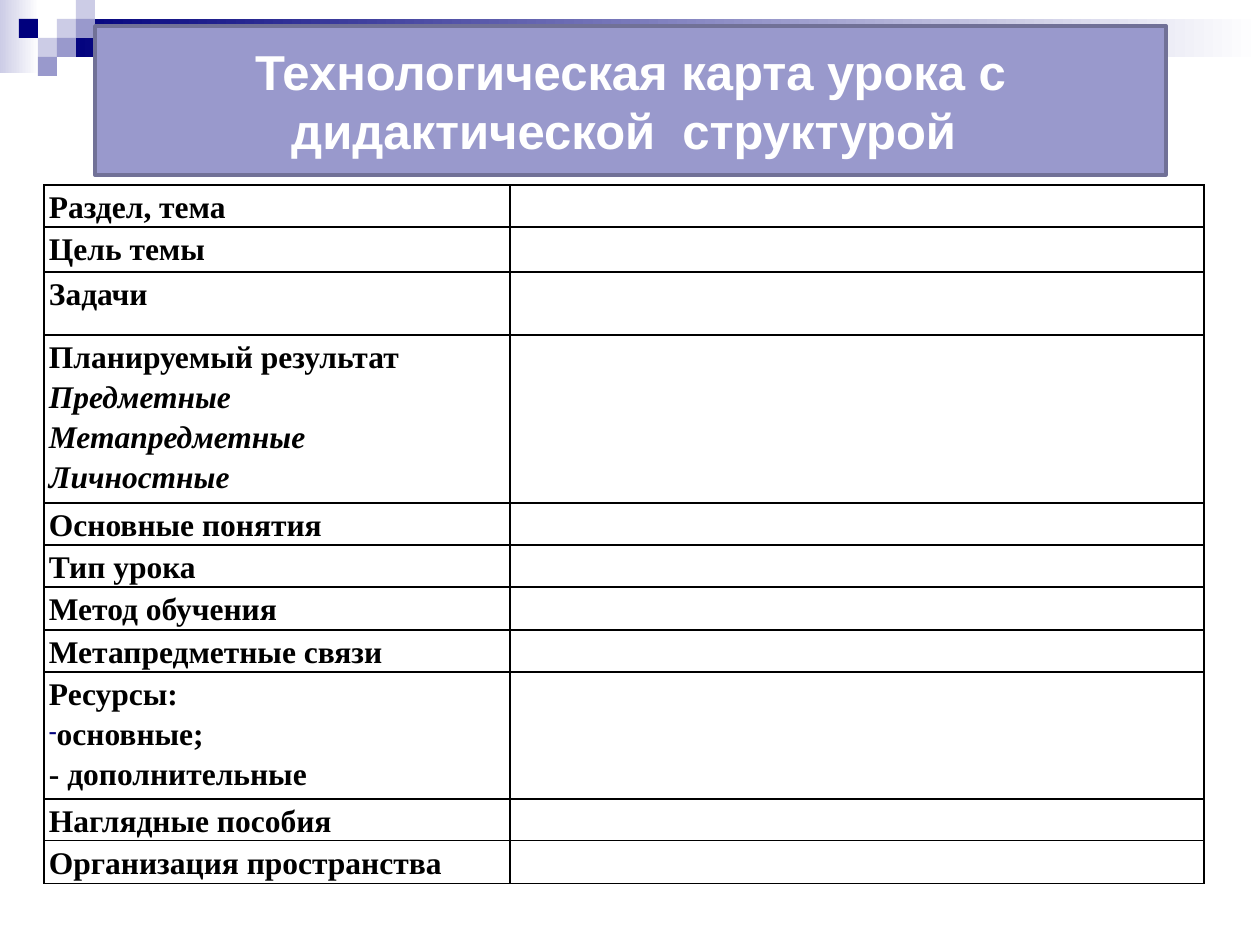
from dataclasses import dataclass

from lxml.etree import SubElement
from pptx import Presentation
from pptx.dml.color import RGBColor
from pptx.enum.shapes import MSO_SHAPE
from pptx.enum.text import MSO_ANCHOR, PP_ALIGN
from pptx.oxml.ns import qn
from pptx.util import Pt

EMU_PER_PX = 914400 / 126


@dataclass(frozen=True)
class Theme:
    navy: str = "00007D"
    violet: str = "9999CC"
    lavender: str = "CCCCE6"
    outline: str = "717197"
    white: str = "FFFFFF"
    black: str = "000000"
    title_font: str = "Arial"
    table_font: str = "Times New Roman"
    title_size: int = 28
    table_size: int = 18


THEME = Theme()
TITLE = "Технологическая карта урока с дидактической  структурой "
COLUMN_WIDTHS = (466, 694)
# Row height and the lines of its first cell
ROWS = (
    (42, ["Раздел, тема"]),
    (45, ["Цель темы"]),
    (63, ["Задачи"]),
    (168, ["Планируемый результат", "Предметные", "Метапредметные", "Личностные"]),
    (42, ["Основные понятия"]),
    (42, ["Тип урока"]),
    (43, ["Метод обучения"]),
    (42, ["Метапредметные связи"]),
    (127, ["Ресурсы:", "основные;", "- дополнительные"]),
    (42, ["Наглядные пособия"]),
    (43, ["Организация пространства"]),
)
ITALIC_LINES = {"Предметные", "Метапредметные", "Личностные"}
BULLET_LINES = {"основные;"}


def px(length):
    return round(length * EMU_PER_PX)


def rgb(color):
    return RGBColor.from_string(color)


def set_attributes(target, values):
    for name, value in values.items():
        setattr(target, name, value)


def add_rectangle(slide, box, colors):
    """Add a borderless rectangle: one colour is solid, two run left to right."""
    shape = slide.shapes.add_shape(MSO_SHAPE.RECTANGLE, *map(px, box))
    shape.shadow.inherit = False
    shape.line.fill.background()
    if len(colors) == 1:
        shape.fill.solid()
        shape.fill.fore_color.rgb = rgb(colors[0])
    else:
        shape.fill.gradient()
        shape.fill.gradient_angle = 0
        for stop, color in zip(shape.fill.gradient_stops, colors):
            stop.color.rgb = rgb(color)
    return shape


def add_run(paragraph, text, color, values):
    run = paragraph.add_run()
    run.text = text
    run.font.color.rgb = rgb(color)
    set_attributes(run.font, values)


def add_corner_ornament(slide, left, top, width):
    add_rectangle(slide, (left, top, 39, 73), (THEME.lavender, THEME.white))
    add_rectangle(slide, (left + 57, top + 19, width - 57, 38), (THEME.navy, THEME.white))
    square = 19
    squares = (
        (3, 1, THEME.lavender), (4, 0, THEME.lavender), (4, 1, THEME.violet),
        (2, 2, THEME.lavender), (1, 1, THEME.navy), (3, 2, THEME.violet),
        (2, 3, THEME.violet),
    )
    for column, row, color in squares:
        box = (left + (column * square), top + row * square, square, square)
        add_rectangle(slide, box, (color,))


def add_title(slide, box):
    shape = add_rectangle(slide, box, (THEME.violet,))
    shape.line.color.rgb = rgb(THEME.outline)
    shape.line.width = Pt(2)
    set_attributes(shape.text_frame, {
        "word_wrap": True, "vertical_anchor": MSO_ANCHOR.MIDDLE})
    paragraph = shape.text_frame.paragraphs[0]
    paragraph.alignment = PP_ALIGN.CENTER
    add_run(paragraph, TITLE, THEME.white, {
        "name": THEME.title_font, "size": Pt(THEME.title_size), "bold": True})


def add_dash_bullet(paragraph):
    properties = paragraph._p.get_or_add_pPr()
    properties.set("marL", "0")
    properties.set("indent", "0")
    color = SubElement(properties, qn("a:buClr"))
    SubElement(color, qn("a:srgbClr"), val=THEME.navy)
    SubElement(properties, qn("a:buSzPct"), val="75000")
    SubElement(properties, qn("a:buChar"), char="-")


def format_cell(cell):
    """Give the cell black borders, no fill and narrow margins."""
    properties = cell._tc.get_or_add_tcPr()
    for side in ("L", "R", "T", "B"):
        line = SubElement(properties, qn(f"a:ln{side}"), w=str(Pt(1)))
        fill = SubElement(line, qn("a:solidFill"))
        SubElement(fill, qn("a:srgbClr"), val=THEME.black)
    cell.fill.background()
    set_attributes(cell, {
        "margin_left": px(5), "margin_right": px(5),
        "margin_top": 0, "margin_bottom": 0})


def fill_cell(cell, lines):
    for index, text in enumerate(lines):
        frame = cell.text_frame
        paragraph = frame.add_paragraph() if index else frame.paragraphs[0]
        paragraph.line_spacing = 1.15
        if text in BULLET_LINES:
            add_dash_bullet(paragraph)
        add_run(paragraph, text, THEME.black, {
            "name": THEME.table_font, "size": Pt(THEME.table_size),
            "bold": True, "italic": text in ITALIC_LINES})


def add_lesson_table(slide, left, top):
    width, height = sum(COLUMN_WIDTHS), sum(row_height for row_height, _ in ROWS)
    table = slide.shapes.add_table(
        len(ROWS), len(COLUMN_WIDTHS), *map(px, (left, top, width, height))).table
    set_attributes(table, {"first_row": False, "horz_banding": False})
    for column, column_width in zip(table.columns, COLUMN_WIDTHS):
        column.width = px(column_width)
    for row, (row_height, lines) in zip(table.rows, ROWS):
        row.height = px(row_height)
        for cell in row.cells:
            format_cell(cell)
        fill_cell(row.cells[0], lines)


def main():
    presentation = Presentation()
    set_attributes(presentation, {"slide_width": px(1260), "slide_height": px(945)})
    slide = presentation.slides.add_slide(presentation.slide_layouts[6])
    add_corner_ornament(slide, 0, 0, 1260)
    add_lesson_table(slide, 44, 185)
    add_title(slide, (95, 26, 1071, 149))
    presentation.save("out.pptx")


if __name__ == "__main__":
    main()
